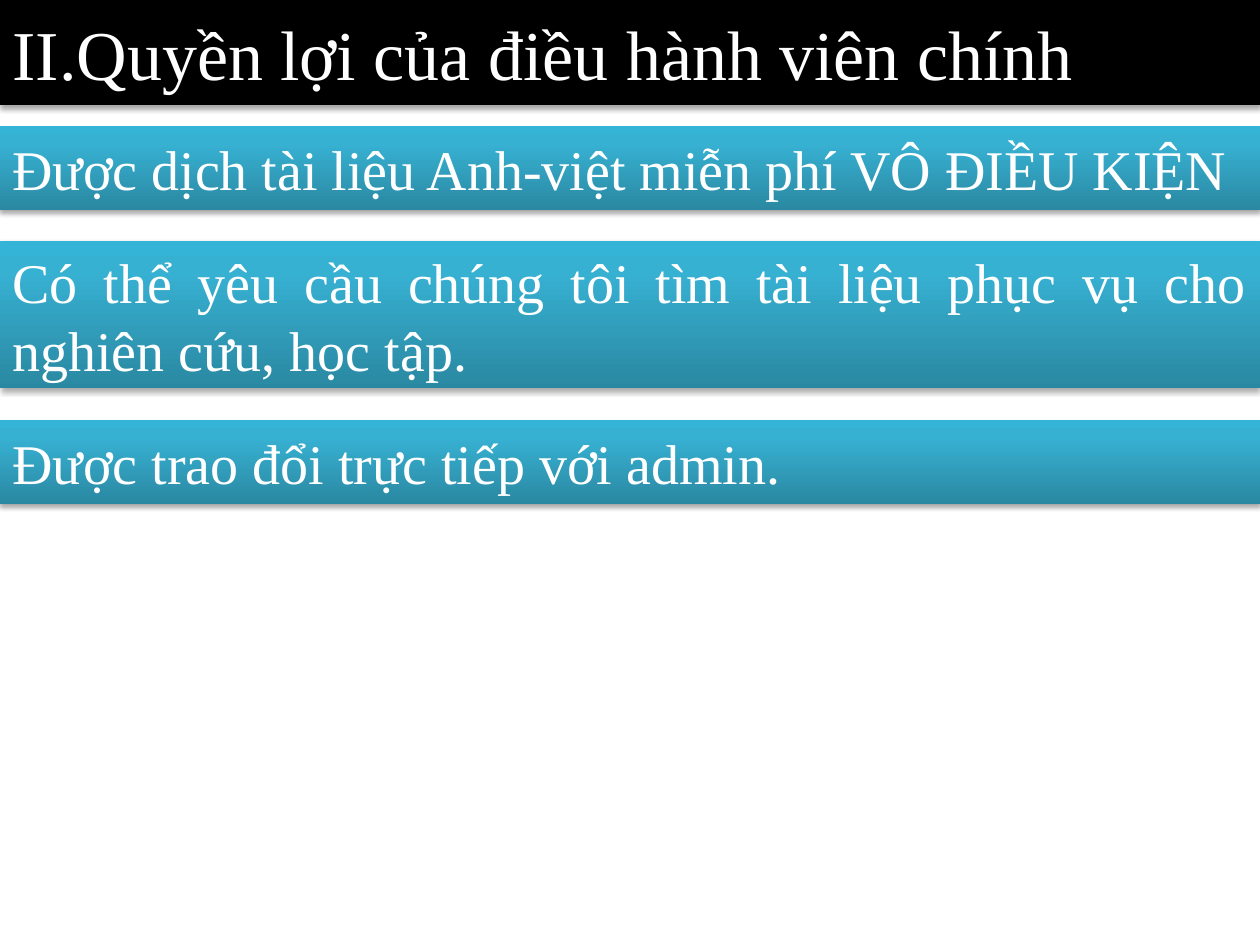
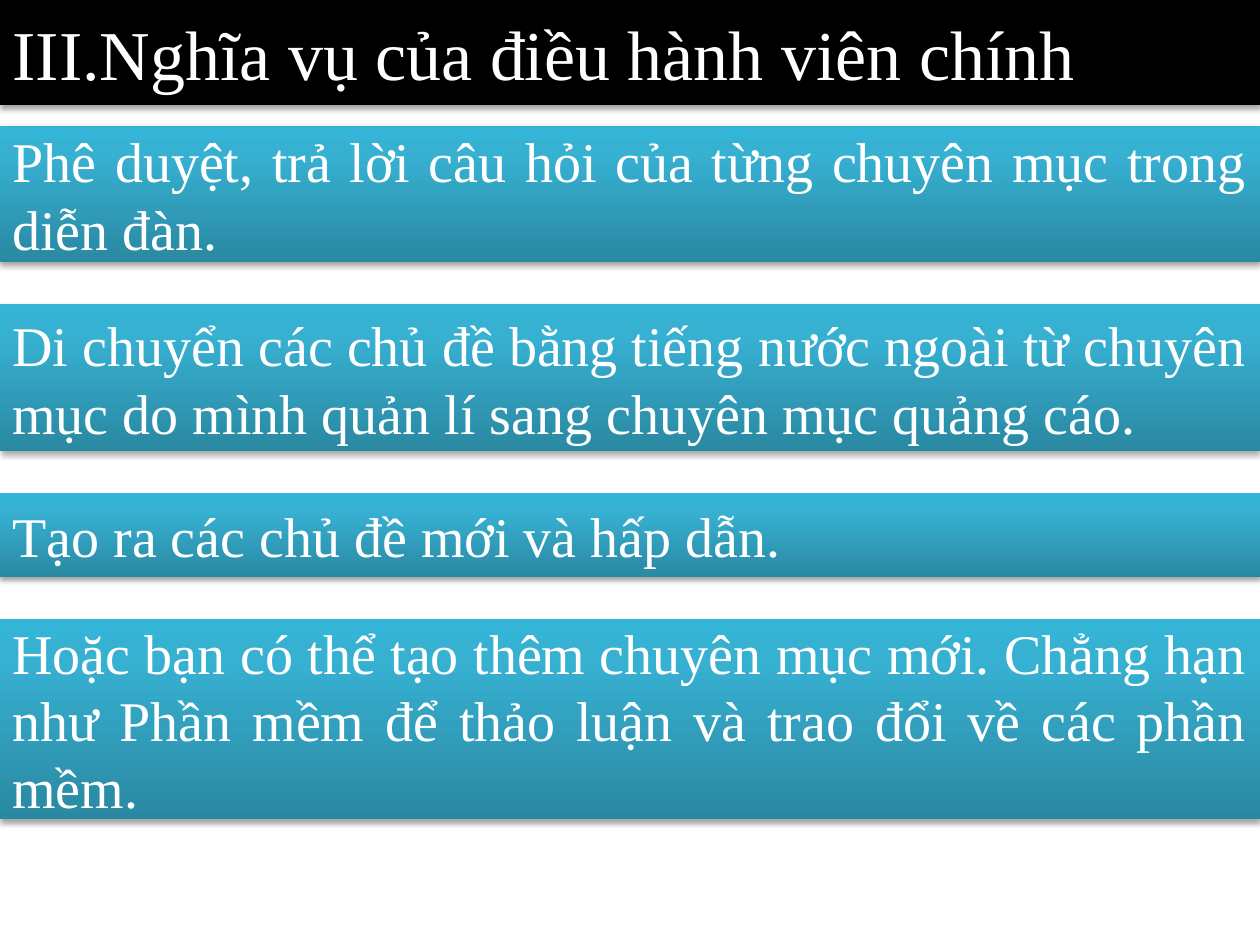
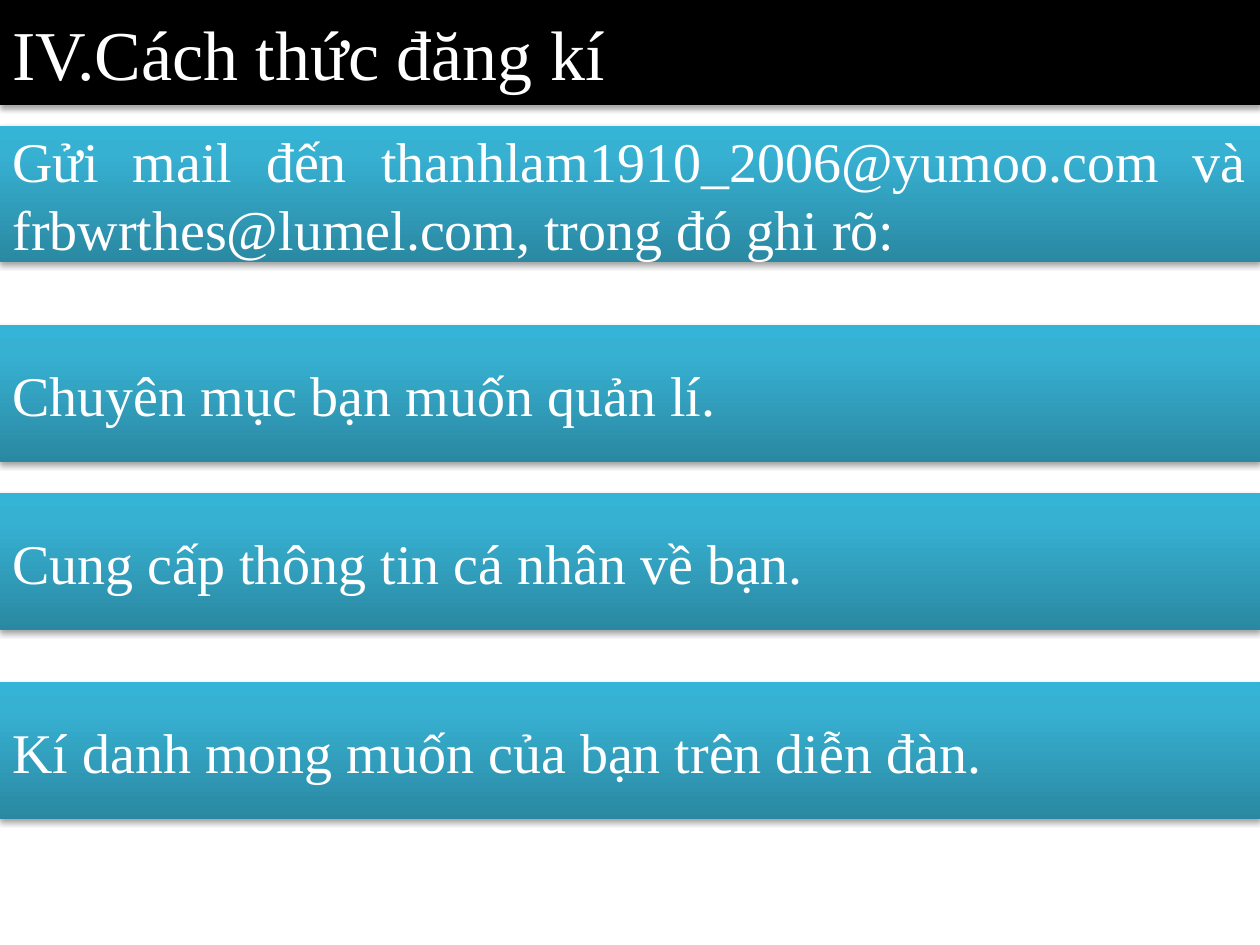
from lxml.etree import SubElement
from pptx import Presentation
from pptx.dml.color import RGBColor
from pptx.enum.shapes import MSO_SHAPE
from pptx.enum.text import MSO_ANCHOR, MSO_AUTO_SIZE, PP_ALIGN
from pptx.oxml.ns import qn
from pptx.util import Pt

# Shared style, lengths in points
WIDTH, HEIGHT = 720, 540
TITLE_HEIGHT = 60
FONT = "Times New Roman"
WHITE, BLACK = "FFFFFF", "000000"
BAND_STOPS = [(0, "2A88A2"), (80, "37B1D2"), (100, "34B4D6")]

# Title, then bands as (top, height, text)
SECTIONS = [
    ("II.Quyền lợi của điều hành viên chính", [
        (72, 48, "Được dịch tài liệu Anh-việt miễn phí VÔ ĐIỀU KIỆN"),
        (138, 84, "Có thể yêu cầu chúng tôi tìm tài liệu phục vụ cho nghiên cứu, học tập."),
        (240, 48, "Được trao đổi trực tiếp với admin."),
    ]),
    ("III.Nghĩa vụ của điều hành viên chính", [
        (72, 78, "Phê duyệt, trả lời câu hỏi của từng chuyên mục trong diễn đàn."),
        (174, 84, "Di chuyển các chủ đề bằng tiếng nước ngoài từ chuyên mục "
                  "do mình quản lí sang chuyên mục quảng cáo."),
        (282, 48, "Tạo ra các chủ đề mới và hấp dẫn."),
        (354, 114, "Hoặc bạn có thể tạo thêm chuyên mục mới. Chẳng hạn như "
                   "Phần mềm để thảo luận và trao đổi về các phần mềm."),
    ]),
    ("IV.Cách thức đăng kí", [
        (72, 78, "Gửi mail đến thanhlam1910_2006@yumoo.com và "
                 "frbwrthes@lumel.com, trong đó ghi rõ:"),
        (186, 78, "Chuyên mục bạn muốn quản lí."),
        (282, 78, "Cung cấp thông tin cá nhân về bạn."),
        (390, 78, "Kí danh mong muốn của bạn trên diễn đàn."),
    ]),
]


def color(hex_text):
    return RGBColor.from_string(hex_text)


def write(shape, text, size=32, fill=WHITE, align=PP_ALIGN.JUSTIFY):
    frame = shape.text_frame
    frame.word_wrap = True
    frame.auto_size = MSO_AUTO_SIZE.NONE
    frame.vertical_anchor = MSO_ANCHOR.MIDDLE
    paragraph = frame.paragraphs[0]
    paragraph.alignment = align
    run = paragraph.add_run()
    run.text = text
    run.font.name = FONT
    run.font.size = Pt(size)
    run.font.color.rgb = color(fill)


def add_color(parent, hex_text):
    return SubElement(parent, qn("a:srgbClr"), val=hex_text)


class Deck:
    def __init__(self):
        self.presentation = Presentation()
        self.presentation.slide_width = Pt(WIDTH)
        self.presentation.slide_height = Pt(HEIGHT)
        self.slide = None

    def finish(self, shape):
        """Remove the outline and add the soft shadow below."""
        shape.line.fill.background()
        shape.shadow.inherit = False
        effects = shape.element.spPr.find(qn("a:effectLst"))
        shadow = SubElement(effects, qn("a:outerShdw"), blurRad=str(Pt(3.1)),
                            dist=str(Pt(1.8)), dir="5400000", rotWithShape="0")
        SubElement(add_color(shadow, BLACK), qn("a:alpha"), val="35000")

    def title(self, text):
        layout = self.presentation.slide_layouts[5]
        self.slide = self.presentation.slides.add_slide(layout)
        heading = self.slide.shapes.title
        heading.left, heading.top = Pt(0), Pt(0)
        heading.width, heading.height = Pt(WIDTH), Pt(TITLE_HEIGHT)
        heading.fill.solid()
        heading.fill.fore_color.rgb = color(BLACK)
        self.finish(heading)
        write(heading, text, size=40)

    def band(self, top, height, text):
        band = self.slide.shapes.add_shape(
            MSO_SHAPE.RECTANGLE, Pt(0), Pt(top), Pt(WIDTH), Pt(height))
        band.fill.gradient()
        band.fill.gradient_angle = 90
        stops = next(band.element.spPr.iter(qn("a:gsLst")))
        for stop in list(stops):
            stops.remove(stop)
        for position, hex_text in BAND_STOPS:
            add_color(SubElement(stops, qn("a:gs"), pos=str(position * 1000)), hex_text)
        self.finish(band)
        write(band, text)


def main():
    deck = Deck()
    for heading, bands in SECTIONS:
        deck.title(heading)
        for top, height, text in bands:
            deck.band(top, height, text)
    deck.presentation.save("out.pptx")


if __name__ == "__main__":
    main()
